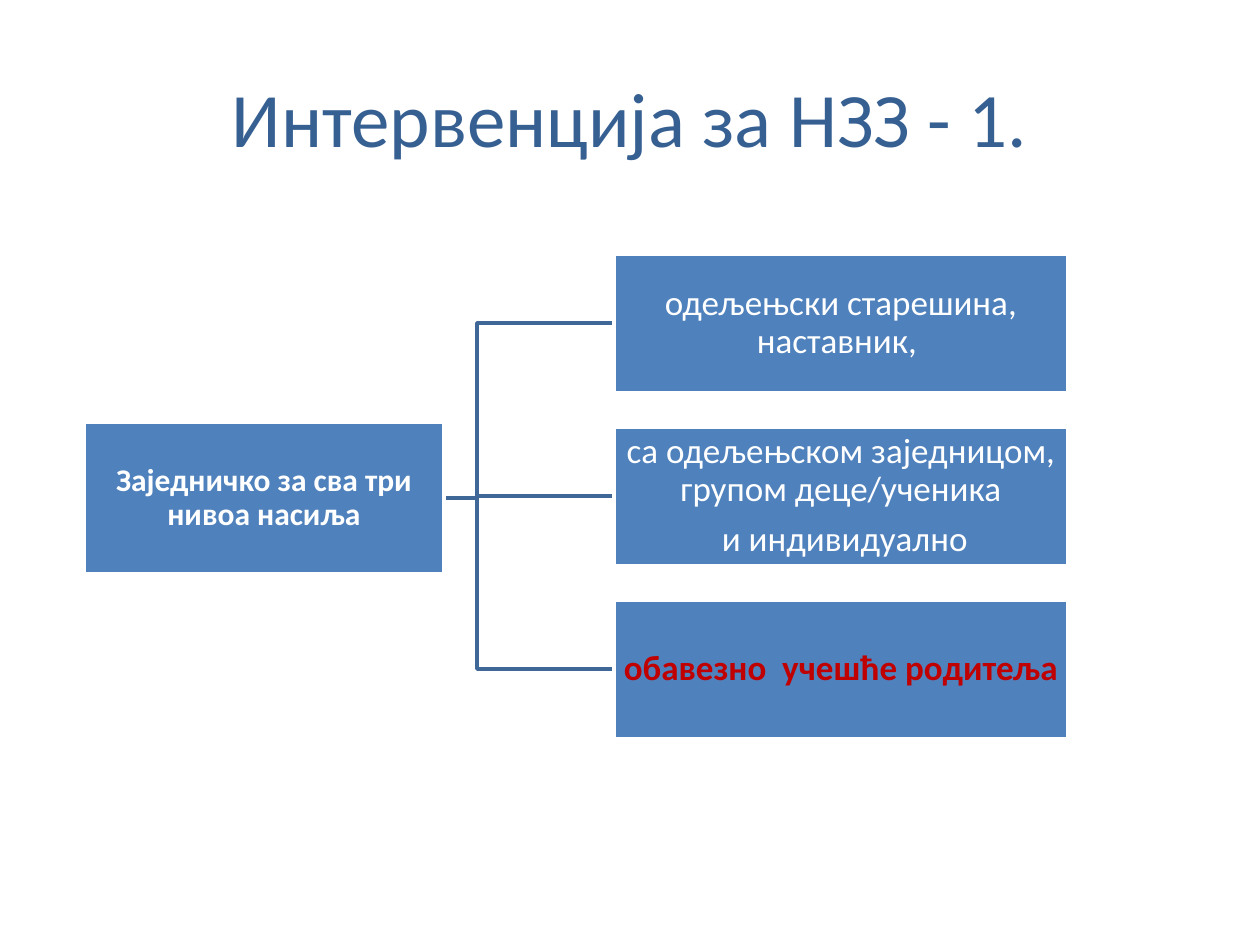
from pptx import Presentation
from pptx.dml.color import RGBColor
from pptx.enum.shapes import MSO_SHAPE
from pptx.enum.text import MSO_ANCHOR, PP_ALIGN
from pptx.util import Pt

PX = 914400 // 126
FONT = "Calibri"
BLUE, LINE_BLUE, TITLE_BLUE = "4F81BD", "3F6797", "376092"
WHITE, RED = "FFFFFF", "C00000"

TITLE = "Интервенција за НЗЗ - 1."
ROOT = ["Заједничко за сва три нивоа насиља"]
# paragraphs, text colour, bold
BRANCHES = [
    (["одељењски старешина, наставник, "], WHITE, False),
    (["са одељењском заједницом, групом деце/ученика", " и индивидуално"], WHITE, False),
    (["обавезно  учешће родитеља"], RED, True),
]

TITLE_BOX = (63, 38, 1134, 157)
ROOT_BOX = (84, 422, 360, 152)
BRANCH_LEFT, BRANCH_TOP, BRANCH_WIDTH, BRANCH_HEIGHT = 614, 254, 454, 139
BRANCH_PITCH = 173
STEM_LEFT = 340


def px(*lengths):
    return [length * PX for length in lengths]


def rgb(color):
    return RGBColor.from_string(color)


def write(shape, paragraphs, size, color, bold=False):
    frame = shape.text_frame
    frame.word_wrap = True
    frame.vertical_anchor = MSO_ANCHOR.MIDDLE
    frame.text = "\n".join(paragraphs)
    for paragraph in frame.paragraphs:
        paragraph.alignment = PP_ALIGN.CENTER
        font = paragraph.font
        font.name, font.size, font.bold = FONT, Pt(size), bold
        font.color.rgb = rgb(color)
    return frame


def add_box(shapes, box, paragraphs, size, color, bold):
    rect = shapes.add_shape(MSO_SHAPE.RECTANGLE, *px(*box))
    rect.shadow.inherit = False
    rect.fill.solid()
    rect.fill.fore_color.rgb = rgb(BLUE)
    rect.line.color.rgb = rgb(WHITE)
    rect.line.width = Pt(2)
    frame = write(rect, paragraphs, size, color, bold)
    frame.margin_left = frame.margin_right = PX
    frame.margin_top = frame.margin_bottom = PX
    for paragraph in frame.paragraphs:
        paragraph.line_spacing = 0.9
        paragraph.space_after = Pt(0.35 * size)


def add_elbow(shapes, start, end):
    """Draw an open right-angled line that turns halfway across."""
    middle = (start[0] + end[0]) // 2
    builder = shapes.build_freeform(*start, scale=PX)
    builder.add_line_segments([(middle, start[1]), (middle, end[1]), end], close=False)
    elbow = builder.convert_to_shape()
    elbow.shadow.inherit = False
    elbow.fill.background()
    elbow.line.color.rgb = rgb(LINE_BLUE)
    elbow.line.width = Pt(2)


def main():
    presentation = Presentation()
    presentation.slide_width, presentation.slide_height = px(1260, 945)
    shapes = presentation.slides.add_slide(presentation.slide_layouts[6]).shapes

    write(shapes.add_textbox(*px(*TITLE_BOX)), [TITLE], 44, TITLE_BLUE)

    tops = [BRANCH_TOP + i * BRANCH_PITCH for i in range(len(BRANCHES))]
    root_middle = ROOT_BOX[1] + ROOT_BOX[3] // 2
    for top in reversed(tops):
        add_elbow(shapes, (STEM_LEFT, root_middle), (BRANCH_LEFT, top + BRANCH_HEIGHT // 2))

    add_box(shapes, ROOT_BOX, ROOT, 18, WHITE, True)
    for top, (paragraphs, color, bold) in zip(tops, BRANCHES):
        box = (BRANCH_LEFT, top, BRANCH_WIDTH, BRANCH_HEIGHT)
        add_box(shapes, box, paragraphs, 20, color, bold)

    presentation.save("out.pptx")


if __name__ == "__main__":
    main()
